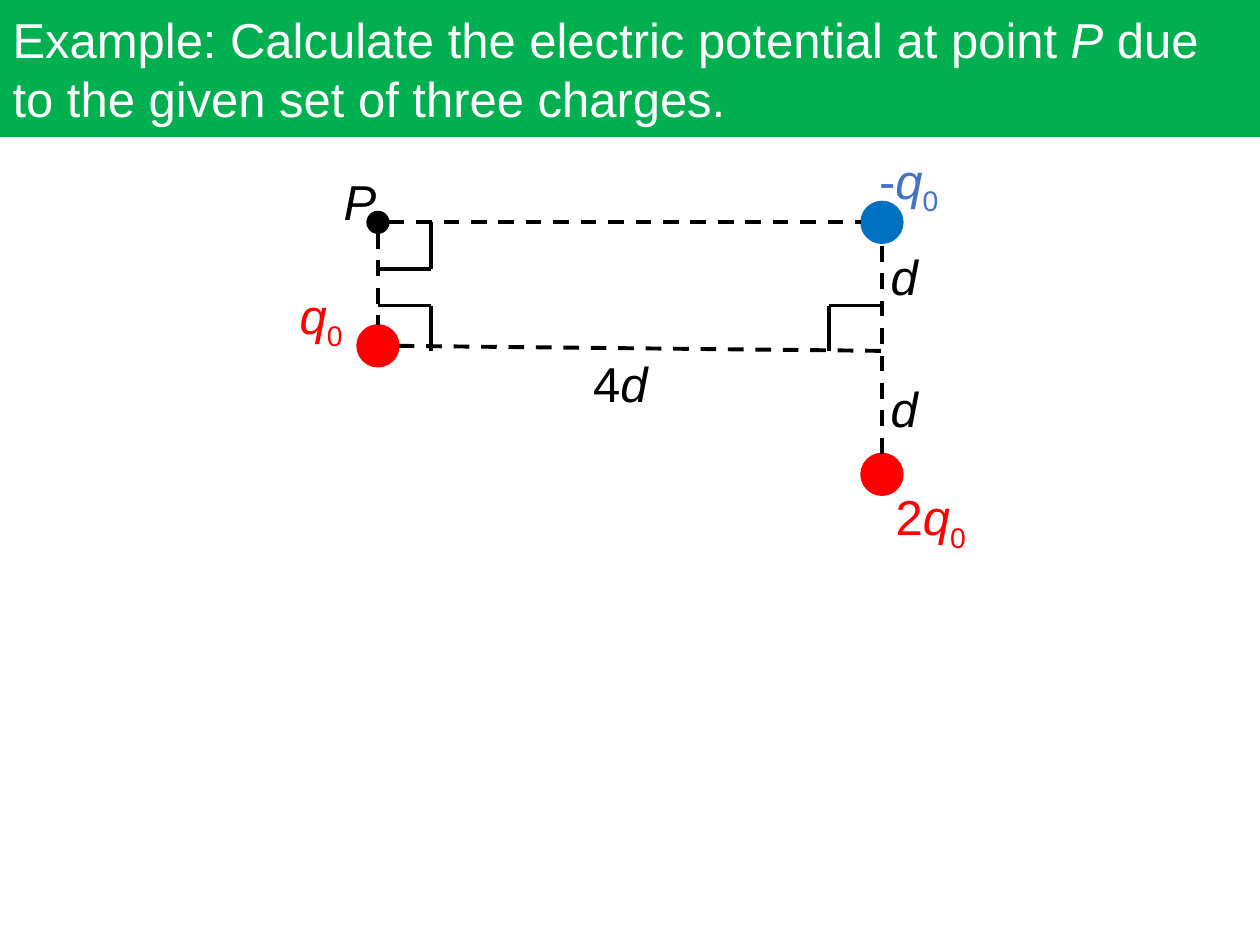
from dataclasses import dataclass

from pptx import Presentation, util as u
from pptx.dml.color import RGBColor
from pptx.enum import dml, shapes, text
from pptx.oxml.ns import qn

COLORS = {
    "banner": "00B050",
    "white": "FFFFFF",
    "black": "000000",
    "positive": "FF0000",
    "negative": "0070C0",
    "negative_label": "4472C4",
}
FONT, FONT_SIZE = "Arial", 28
# One grid cell is the distance d; point P is the grid's origin.
CELL = 1.0
ORIGIN_X, ORIGIN_Y = 3.0, 1.765
CHARGE_RADIUS, POINT_RADIUS = 0.165, 0.085
MARK = 0.42  # width of a right-angle mark
FOOT = 1.02  # row where the 4d line meets the right side

PLAIN, ITALIC, SUB = "plain", "italic", "sub"
Q0 = [("q", ITALIC), ("0", SUB)]


@dataclass(frozen=True)
class Dot:
    col: float
    row: float
    radius: float
    color: str


@dataclass(frozen=True)
class Label:
    col: float
    row: float
    width: float
    runs: list
    color: str = "black"


@dataclass(frozen=True)
class Segment:
    start: tuple[float, float]
    end: tuple[float, float]
    dashed: bool = False


DOTS = [
    Dot(0, 0.98, CHARGE_RADIUS, "positive"),
    Dot(4, 2, CHARGE_RADIUS, "positive"),
    Dot(4, 0, CHARGE_RADIUS, "negative"),
    Dot(0, 0, POINT_RADIUS, "black"),
]
SIDES = [
    Segment((POINT_RADIUS, 0), (4 - CHARGE_RADIUS, 0), True),
    Segment((0, POINT_RADIUS), (0, 0.98 - CHARGE_RADIUS), True),
    Segment((CHARGE_RADIUS, 0.98), (4, FOOT), True),
    Segment((4, 2 - CHARGE_RADIUS), (4, CHARGE_RADIUS), True),
]
# Each mark: column of the side, column of its free corner, inner row, row of the base.
ANGLE_MARKS = [
    (0, MARK, 0.37, 0),
    (0, MARK, 0.66, FOOT),
    (4, 4 - MARK, 0.66, FOOT),
]
LABELS = [
    Label(-0.72, 0.45, 0.57, Q0, "positive"),
    Label(4.01, 2.05, 0.79, [("2", PLAIN), *Q0], "positive"),
    Label(3.88, -0.62, 0.7, [("-", PLAIN), *Q0], "negative_label"),
    Label(1.61, 0.99, 0.64, [("4", PLAIN), ("d", ITALIC)]),
    Label(3.97, 0.14, 0.42, [("d", ITALIC)]),
    Label(3.97, 1.19, 0.42, [("d", ITALIC)]),
    Label(-0.37, -0.45, 0.46, [("P", ITALIC)]),
]


def rgb(name: str) -> RGBColor:
    return RGBColor.from_string(COLORS[name])


def x(col: float) -> int:
    return u.Inches(ORIGIN_X + col * CELL)


def y(row: float) -> int:
    return u.Inches(ORIGIN_Y + row * CELL)


def paint(shape, color: str) -> None:
    shape.fill.solid()
    shape.fill.fore_color.rgb = rgb(color)
    shape.line.color.rgb = rgb(color)
    shape.line.width = u.Pt(1)


def write(frame, runs: list, *, color: str, wrap: bool,
          anchor=text.MSO_ANCHOR.TOP, fit=text.MSO_AUTO_SIZE.NONE) -> None:
    """Fill a text frame with (text, style) runs."""
    frame.word_wrap = wrap
    frame.auto_size = fit
    frame.vertical_anchor = anchor
    paragraph = frame.paragraphs[0]
    paragraph.alignment = text.PP_ALIGN.LEFT
    for words, style in runs:
        run = paragraph.add_run()
        run.text = words
        run.font.name = FONT
        run.font.size = u.Pt(FONT_SIZE)
        run.font.italic = style == ITALIC
        run.font.color.rgb = rgb(color)
        if style == SUB:
            run.font._element.set("baseline", "-25000")


def draw_banner(slide, width: int, height: int) -> None:
    banner = slide.shapes.title
    banner.left, banner.top = 0, 0
    banner.width, banner.height = width, int(height * 0.144)
    paint(banner, "banner")
    write(banner.text_frame, [
        ("Example: Calculate the electric potential at point ", PLAIN),
        ("P", ITALIC),
        (" due to the given set of three charges.", PLAIN),
    ], color="white", wrap=True, anchor=text.MSO_ANCHOR.MIDDLE)


def draw_dot(slide, dot: Dot) -> None:
    size = u.Inches(2 * dot.radius)
    circle = slide.shapes.add_shape(
        shapes.MSO_SHAPE.OVAL, x(dot.col - dot.radius), y(dot.row - dot.radius), size, size)
    circle.shadow.inherit = False
    paint(circle, dot.color)


def draw_segment(slide, segment: Segment) -> None:
    (col1, row1), (col2, row2) = segment.start, segment.end
    line = slide.shapes.add_connector(
        shapes.MSO_CONNECTOR.STRAIGHT, x(col1), y(row1), x(col2), y(row2))
    line.line.color.rgb = rgb("black")
    line.line.width = u.Pt(2.25)
    if segment.dashed:
        line.line.dash_style = dml.MSO_LINE.DASH
    properties = line._element.spPr
    properties.append(properties.makeelement(qn("a:effectLst"), {}))


def draw_label(slide, label: Label) -> None:
    box = slide.shapes.add_textbox(
        x(label.col), y(label.row), u.Inches(label.width), u.Inches(0.57))
    write(box.text_frame, label.runs, color=label.color, wrap=False,
          fit=text.MSO_AUTO_SIZE.SHAPE_TO_FIT_TEXT)


def main() -> None:
    deck = Presentation()
    deck.slide_width, deck.slide_height = u.Inches(10), u.Inches(7.5)
    slide = deck.slides.add_slide(deck.slide_layouts[5])
    draw_banner(slide, deck.slide_width, deck.slide_height)
    for dot in DOTS:
        draw_dot(slide, dot)
    for side in SIDES:
        draw_segment(slide, side)
    for side_col, corner_col, inner_row, base_row in ANGLE_MARKS:
        corner = (corner_col, inner_row)
        draw_segment(slide, Segment(corner, (side_col, inner_row)))
        draw_segment(slide, Segment(corner, (corner_col, base_row)))
    for label in LABELS:
        draw_label(slide, label)
    deck.save("out.pptx")


if __name__ == "__main__":
    main()
